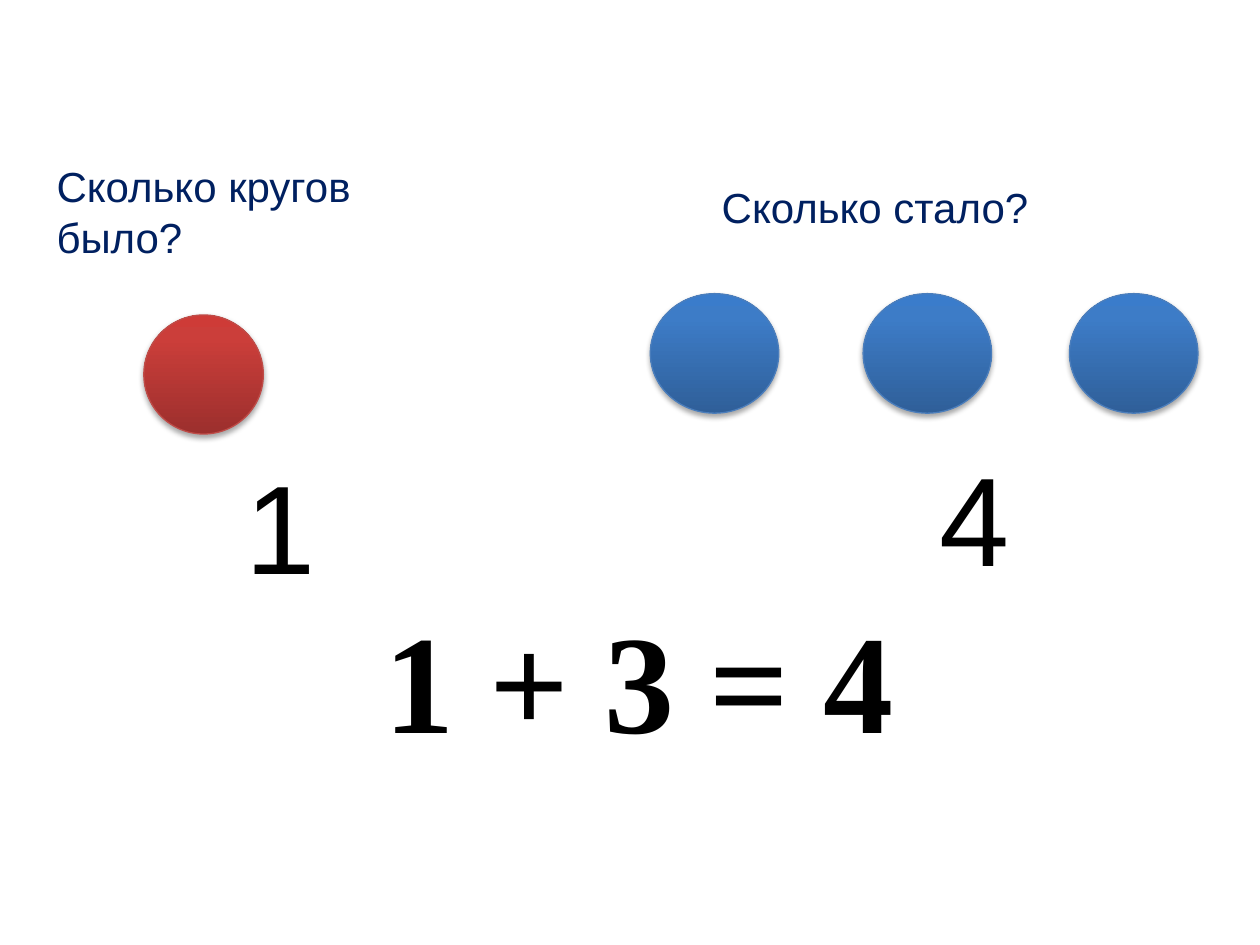
"""Build a counting slide: one red circle, three blue circles and the sum."""
import copy
from dataclasses import dataclass

import pptx
import pptx.dml.color
import pptx.enum.shapes
import pptx.enum.text
import pptx.oxml
import pptx.oxml.ns
import pptx.shapes.autoshape
import pptx.slide
import pptx.util
from pptx.util import Cm


@dataclass(frozen=True)
class Palette:
    stops: tuple[str, str, str]
    outline: str


@dataclass(frozen=True)
class Theme:
    red: Palette = Palette(("9C2F2D", "CB3E3A", "CE3B37"), "BF4C48")
    blue: Palette = Palette(("2F5F99", "3D7CC7", "3A7CCB"), "4B7EBC")
    stop_positions: tuple[float, float, float] = (0, 0.8, 1)
    question_color: str = "002060"
    number_color: str = "000000"
    sans: str = "Arial"
    serif: str = "Times New Roman"
    question_size: int = 24
    answer_size: int = 72
    sum_size: int = 80


@dataclass(frozen=True)
class Box:
    left: float
    top: float
    width: float
    height: float

    def lengths(self) -> tuple[Cm, Cm, Cm, Cm]:
        """Return the box as slide lengths."""
        return Cm(self.left), Cm(self.top), Cm(self.width), Cm(self.height)


@dataclass(frozen=True)
class Circle:
    box: Box
    palette: Palette


@dataclass(frozen=True)
class Label:
    text: str
    box: Box
    size: int
    color: str
    font: str
    bold: bool = False
    centered: bool = False


THEME = Theme()

CIRCLES = [Circle(Box(2.9, 6.35, 2.41, 2.4), THEME.red)] + [
    Circle(Box(left, 5.92, 2.59, 2.41), THEME.blue) for left in (13.11, 17.4, 21.56)
]

LABELS = [
    Label("1", Box(4.7, 8.92, 3.61, 3.33), THEME.answer_size, THEME.number_color, THEME.sans),
    Label("4", Box(18.69, 8.76, 3, 3.33), THEME.answer_size, THEME.number_color, THEME.sans),
    Label("Сколько кругов было?", Box(0.89, 3.12, 7.59, 2.31),
          THEME.question_size, THEME.question_color, THEME.sans),
    Label("Сколько стало?", Box(14.3, 3.53, 9.86, 1.27),
          THEME.question_size, THEME.question_color, THEME.sans),
    Label("1 + 3 = 4", Box(2.69, 11.84, 20.4, 3.68),
          THEME.sum_size, THEME.number_color, THEME.serif, bold=True, centered=True),
]


def rgb(color: str) -> pptx.dml.color.RGBColor:
    """Turn a hex string into a colour."""
    return pptx.dml.color.RGBColor.from_string(color)


def add_gradient(disc: pptx.shapes.autoshape.Shape, palette: Palette) -> None:
    """Fill a disc with a three-stop gradient, dark at the bottom."""
    disc.fill.gradient()
    disc.fill.gradient_angle = 90
    stop_list = disc.element.spPr.find(".//" + pptx.oxml.ns.qn("a:gsLst"))
    stop_list.append(copy.deepcopy(stop_list[-1]))
    for stop, color, position in zip(
        disc.fill.gradient_stops, palette.stops, THEME.stop_positions
    ):
        stop.color.rgb = rgb(color)
        stop.position = position


def add_soft_shadow(disc: pptx.shapes.autoshape.Shape) -> None:
    """Give a disc a soft shadow straight below it."""
    disc.shadow.inherit = False
    effects = disc.element.spPr.find(pptx.oxml.ns.qn("a:effectLst"))
    effects.append(pptx.oxml.parse_xml(
        f'<a:outerShdw {pptx.oxml.ns.nsdecls("a")} blurRad="40000" dist="23000" '
        'dir="5400000" rotWithShape="0"><a:srgbClr val="000000">'
        '<a:alpha val="35000"/></a:srgbClr></a:outerShdw>'
    ))


def draw_circle(slide: pptx.slide.Slide, circle: Circle) -> None:
    """Draw one counting circle."""
    disc = slide.shapes.add_shape(
        pptx.enum.shapes.MSO_SHAPE.OVAL, *circle.box.lengths()
    )
    add_gradient(disc, circle.palette)
    disc.line.color.rgb = rgb(circle.palette.outline)
    disc.line.width = pptx.util.Pt(0.75)
    add_soft_shadow(disc)


def draw_label(slide: pptx.slide.Slide, label: Label) -> None:
    """Draw one question, number or sum."""
    frame = slide.shapes.add_textbox(*label.box.lengths()).text_frame
    frame.word_wrap = True
    frame.auto_size = pptx.enum.text.MSO_AUTO_SIZE.SHAPE_TO_FIT_TEXT
    frame.text = label.text
    paragraph = frame.paragraphs[0]
    if label.centered:
        paragraph.alignment = pptx.enum.text.PP_ALIGN.CENTER
    font = paragraph.runs[0].font
    font.name = label.font
    font.size = pptx.util.Pt(label.size)
    font.bold = label.bold
    font.color.rgb = rgb(label.color)


def main() -> None:
    """Build and save the slide."""
    deck = pptx.Presentation()
    deck.slide_width, deck.slide_height = Cm(25.4), Cm(19.05)
    slide = deck.slides.add_slide(deck.slide_layouts.get_by_name("Blank"))
    for circle in CIRCLES:
        draw_circle(slide, circle)
    for label in LABELS:
        draw_label(slide, label)
    deck.save("out.pptx")


if __name__ == "__main__":
    main()
